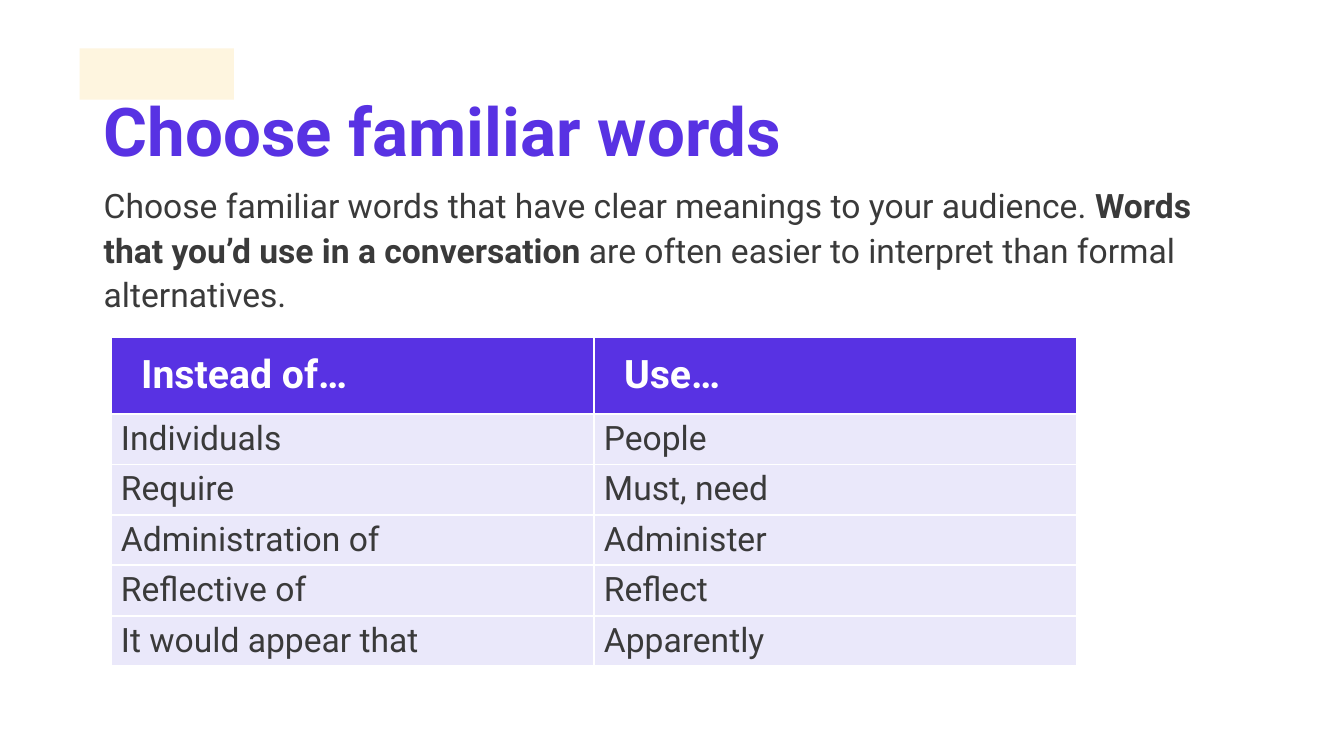
"""Build the slide on choosing familiar words."""
from dataclasses import dataclass

from lxml.etree import SubElement
from pptx import Presentation
from pptx.dml.color import RGBColor
from pptx.enum.shapes import MSO_SHAPE
from pptx.enum.text import MSO_ANCHOR
from pptx.oxml.ns import qn
from pptx.util import Inches, Pt

TITLE = [("Choose familiar words", True)]
INTRO = [
    ("Choose familiar words that have clear meanings to your audience. ", False),
    ("Words that you’d use in a conversation ", True),
    ("are often easier to interpret than formal alternatives.", False),
]
WORDS = [
    ("Instead of…", "Use…"),
    ("Individuals", "People"),
    ("Require", "Must, need"),
    ("Administration of", "Administer"),
    ("Reflective of", "Reflect"),
    ("It would appear that", "Apparently"),
]


@dataclass(frozen=True)
class Theme:
    font: str = "Roboto"
    purple: str = "5832E3"
    ink: str = "3A3A3A"
    white: str = "FFFFFF"
    lilac: str = "EAE8FA"
    cream: str = "FEF5DF"
    title: int = 48
    heading: int = 28
    body: int = 24
    border: float = 1.5


THEME = Theme()
SLIDE_SIZE = (13.33, 7.5)
ACCENT_AREA = (0.79, 0.48, 1.53, 0.51)
TITLE_AREA = (0.93, 0.74, 11.88, 1.01)
INTRO_AREA = (0.93, 1.75, 11.31, 1.59)
TABLE_CORNER = (1.1, 3.34)
COLUMN_WIDTH, HEADING_HEIGHT, ROW_HEIGHT = 4.79, 0.75, 0.49
HEADING_MARGINS = {"margin_left": 0.3, "margin_top": 0.15,
                   "margin_right": 0.15, "margin_bottom": 0.15}


def set_all(target, values):
    for name, value in values.items():
        setattr(target, name, value)


def write(para, spans, size, color):
    for text, bold in spans:
        span = para.add_run()
        span.text = text
        set_all(span.font, {"name": THEME.font, "size": Pt(size), "bold": bold})
        span.font.color.rgb = RGBColor.from_string(color)


def paint(fill, color):
    fill.solid()
    fill.fore_color.rgb = RGBColor.from_string(color)


def add_text(page, area, spans, size, color, anchor):
    box = page.shapes.add_textbox(*map(Inches, area))
    set_all(box.text_frame, {"word_wrap": True, "vertical_anchor": anchor})
    para = box.text_frame.paragraphs[0]
    set_all(para, {"line_spacing": 1.1, "space_after": Pt(5)})
    write(para, spans, size, color)


def add_borders(cell):
    properties = cell._tc.get_or_add_tcPr()
    for index, side in enumerate(("lnL", "lnR", "lnT", "lnB")):
        line = properties.makeelement(qn(f"a:{side}"), {"w": str(Pt(THEME.border))})
        color = SubElement(SubElement(line, qn("a:solidFill")), qn("a:srgbClr"))
        color.set("val", THEME.white)
        properties.insert(index, line)


def add_word_table(page):
    heights = [HEADING_HEIGHT] + [ROW_HEIGHT] * (len(WORDS) - 1)
    columns = len(WORDS[0])
    size = (COLUMN_WIDTH * columns, sum(heights))
    frame = page.shapes.add_table(len(WORDS), columns, *map(Inches, TABLE_CORNER + size))
    table = frame.table
    for column in table.columns:
        column.width = Inches(COLUMN_WIDTH)
    for row, (words, height) in enumerate(zip(WORDS, heights)):
        table.rows[row].height = Inches(height)
        heading = row == 0
        for column, word in enumerate(words):
            cell = table.cell(row, column)
            paint(cell.fill, THEME.purple if heading else THEME.lilac)
            add_borders(cell)
            if heading:
                cell.vertical_anchor = MSO_ANCHOR.MIDDLE
                set_all(cell, {name: Inches(gap) for name, gap in HEADING_MARGINS.items()})
            write(cell.text_frame.paragraphs[0], [(word, heading)],
                  THEME.heading if heading else THEME.body,
                  THEME.white if heading else THEME.ink)


def main():
    deck = Presentation()
    deck.slide_width, deck.slide_height = map(Inches, SLIDE_SIZE)
    page = deck.slides.add_slide(deck.slide_layouts[6])
    accent = page.shapes.add_shape(MSO_SHAPE.RECTANGLE, *map(Inches, ACCENT_AREA))
    accent.shadow.inherit = False
    paint(accent.fill, THEME.cream)
    accent.line.fill.background()
    add_text(page, TITLE_AREA, TITLE, THEME.title, THEME.purple, MSO_ANCHOR.MIDDLE)
    add_text(page, INTRO_AREA, INTRO, THEME.body, THEME.ink, MSO_ANCHOR.TOP)
    add_word_table(page)
    deck.save("out.pptx")


if __name__ == "__main__":
    main()
